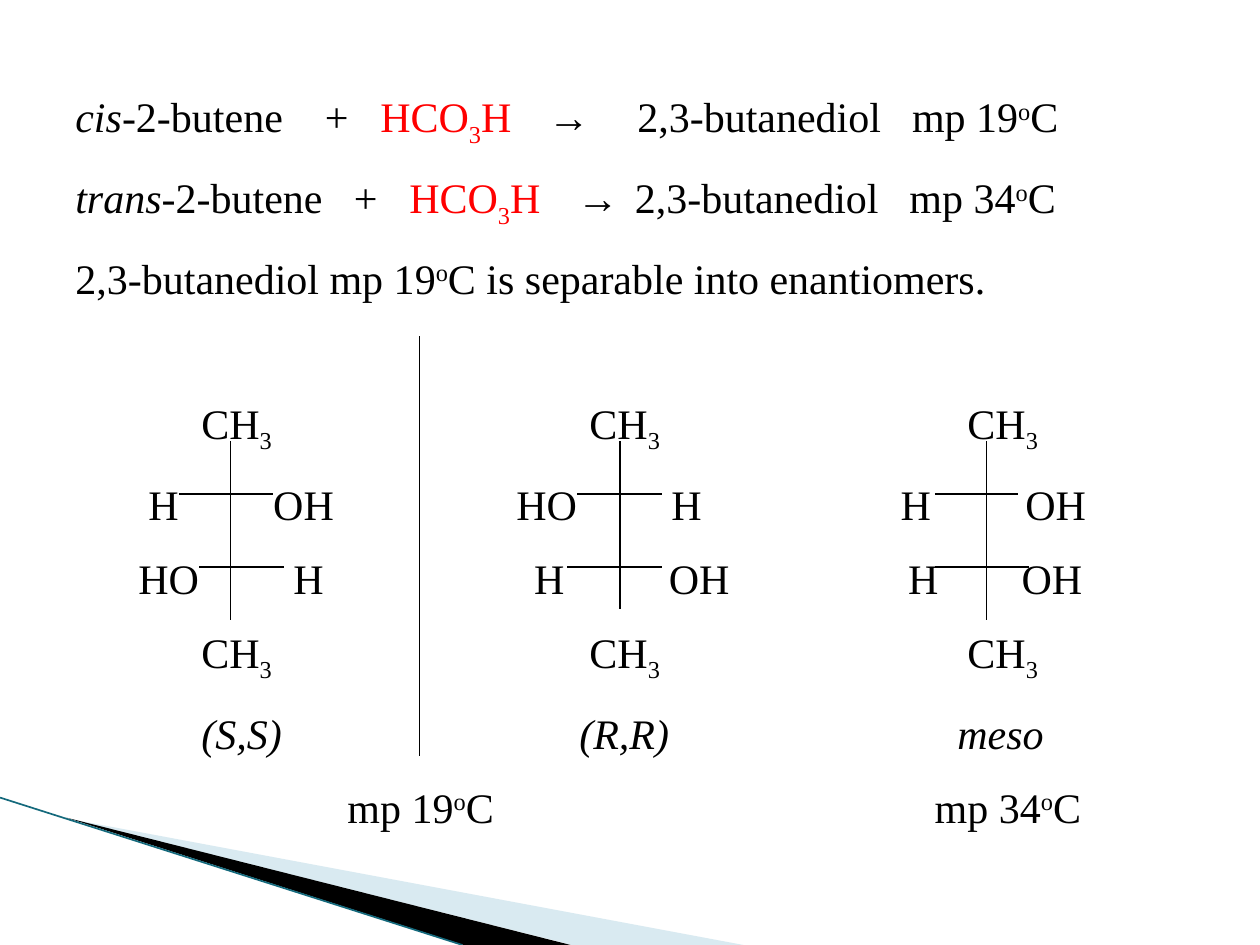
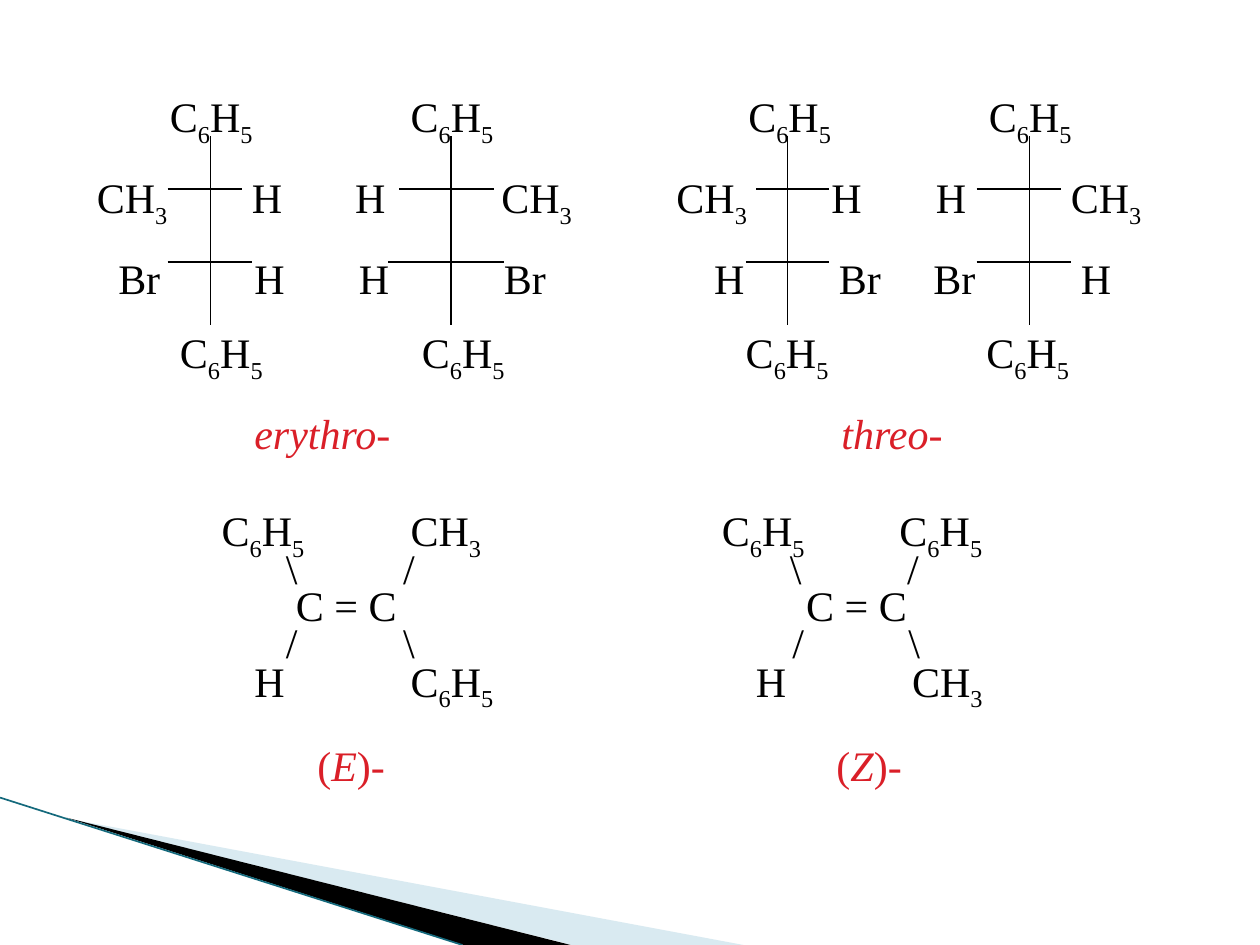
import lxml.etree
import pptx
import pptx.dml.color
import pptx.enum.shapes
import pptx.enum.text
import pptx.oxml
import pptx.oxml.ns
import pptx.util

Inches = pptx.util.Inches
Pt = pptx.util.Pt
RGBColor = pptx.dml.color.RGBColor
qn = pptx.oxml.ns.qn

BLACK = RGBColor(0x00, 0x00, 0x00)
REAGENT_RED = RGBColor(0xFF, 0x00, 0x00)
PREFIX_RED = RGBColor(0xDA, 0x1F, 0x28)
PALE_BLUE = RGBColor(0xA0, 0xCB, 0xDC)
TEAL = RGBColor(0x14, 0x69, 0x7C)
FONT = "Times New Roman"
ROW_GAP = 13.5
TIGHT_GAP = 12.5
INSET = 0.1
UPPER_ARM, LOWER_ARM = 0.42, 1.0


def split_markup(text):
    pieces = []
    italic = accent = False
    baseline = 0
    for char in text:
        if char == "*":
            italic = not italic
        elif char == "~":
            accent = not accent
        elif char in "_^":
            baseline = -25000 if char == "_" else 30000
        else:
            style = (italic, accent, baseline)
            if pieces and pieces[-1][1] == style:
                pieces[-1][0] += char
            else:
                pieces.append([char, style])
            baseline = 0
    return pieces


def write_row(paragraph, text, stops=(), gap=ROW_GAP, spacing=1.0, size=24, accent=REAGENT_RED):
    if stops:
        tab_list = lxml.etree.SubElement(paragraph._p.get_or_add_pPr(), qn("a:tabLst"))
        for stop in stops:
            lxml.etree.SubElement(tab_list, qn("a:tab"), pos=str(Inches(stop)), algn="l")
    paragraph.font.size = Pt(size)
    paragraph.line_spacing = spacing
    paragraph.space_before = Pt(gap)
    for piece, (italic, accented, baseline) in split_markup(text):
        run = paragraph.add_run()
        run.text = piece
        run.font.name = FONT
        run.font.size = Pt(size)
        run.font.italic = italic
        run.font.color.rgb = accent if accented else BLACK
        if baseline:
            run.font._element.set("baseline", str(baseline))


def write_rows(slide, box, rows, accent):
    frame = slide.shapes.add_textbox(*map(Inches, box)).text_frame
    frame.word_wrap = True
    frame.vertical_anchor = pptx.enum.text.MSO_ANCHOR.TOP
    frame.margin_left = frame.margin_right = Inches(INSET)
    for index, (text, stops, *spacing) in enumerate(rows):
        paragraph = frame.add_paragraph() if index else frame.paragraphs[0]
        layout = dict(zip(("gap", "spacing"), spacing))
        if not index:
            layout["gap"] = 0
        write_row(paragraph, text, stops, accent=accent, **layout)


def draw_line(shapes, start, end, color=BLACK, width=0.75):
    line = shapes.add_connector(
        pptx.enum.shapes.MSO_CONNECTOR.STRAIGHT, *map(Inches, (*start, *end)))
    line.line.color.rgb = color
    line.line.width = Pt(width)
    lxml.etree.SubElement(line.element.spPr, qn("a:effectLst"))
    return line


def draw_fischer_bonds(slide, box, top, molecules):
    left, box_top = box[:2]
    top += box_top
    for stem, length, upper, lower in molecules:
        draw_line(slide.shapes, (left + stem, top), (left + stem, top + length))
        for drop, (start, end) in ((UPPER_ARM, upper), (LOWER_ARM, lower)):
            draw_line(slide.shapes, (left + start, top + drop), (left + end, top + drop))


def draw_swoosh(shapes, points, color, alpha=100):
    start, *rest = [tuple(map(Inches, point)) for point in points]
    builder = shapes.build_freeform(*start)
    builder.add_line_segments(rest, close=True)
    swoosh = builder.convert_to_shape()
    swoosh.shadow.inherit = False
    swoosh.fill.solid()
    swoosh.fill.fore_color.rgb = color
    swoosh.line.fill.background()
    if alpha < 100:
        fill = swoosh.element.spPr.find(qn("a:solidFill"))
        lxml.etree.SubElement(fill[0], qn("a:alpha"), val=str(alpha * 1000))
    return swoosh


def decorate_layout(layout, slide):
    shapes = slide.shapes
    corner = (
        draw_swoosh(shapes, ((0.55, 6.5), (5.9, 7.5), (4.54, 7.5)), PALE_BLUE, alpha=40),
        draw_swoosh(shapes, ((0.53, 6.49), (4.53, 7.5), (3.68, 7.5)), BLACK),
        draw_line(shapes, (0, 6.33), (3.67, 7.5), TEAL, 0.95),
    )
    for part in corner:
        layout.element.cSld.spTree.append(part.element)


def build_butanediol_slide(slide, box):
    methyl_stops = (1.0, 4.08, 7.08)
    rows = (
        ("*cis*-2-butene\t+\t~HCO_3H~\t→\t2,3-butanediol\tmp 19^oC",
         (1.98, 2.42, 3.75, 4.46, 6.64)),
        ("*trans*-2-butene\t+\t~HCO_3H~\t→\t2,3-butanediol\tmp 34^oC",
         (2.21, 2.65, 3.98, 4.44, 6.62)),
        ("2,3-butanediol mp 19^oC is separable into enantiomers.", ()),
        ("\tCH_3\tCH_3\tCH_3", methyl_stops, 54),
        ("\tH\tOH\tHO\tH\tH\tOH", (0.58, 1.57, 3.5, 4.73, 6.55, 7.54)),
        ("\tHO\tH\tH\tOH\tH\tOH", (0.5, 1.73, 3.64, 4.71, 6.61, 7.51)),
        ("\tCH_3\tCH_3\tCH_3", methyl_stops),
        ("*\t(S,S)\t(R,R)\tmeso*", (1.0, 4.0, 7.0)),
        ("\tmp 19^oC\tmp 34^oC", (2.16, 6.82)),
    )
    write_rows(slide, box, rows, REAGENT_RED)
    draw_fischer_bonds(slide, box, 2.83, (
        (1.33, 1.42, (0.92, 1.67), (1.08, 1.75)),
        (4.42, 1.33, (4.08, 4.75), (4.0, 4.75)),
        (7.33, 1.42, (6.92, 7.58), (6.92, 7.67)),
    ))
    mirror = box[0] + 2.83
    draw_line(slide.shapes, (mirror, box[1] + 2), (mirror, box[1] + 5.33))


def build_prefix_slide(slide, box):
    phenyls = "\tC_6H_5" * 4
    rows = (
        (phenyls, (0.58, 2.49, 5.17, 7.08)),
        ("CH_3\tH\tH\tCH_3\tCH_3\tH\tH\tCH_3",
         (1.23, 2.05, 3.21, 4.6, 5.83, 6.66, 7.73)),
        ("\tBr\tH\tH\tBr\tH\tBr\tBr\tH",
         (0.17, 1.25, 2.08, 3.23, 4.9, 5.89, 6.64, 7.81)),
        (phenyls, (0.66, 2.58, 5.15, 7.06)),
        ("~*\terythro-\tthreo-*~", (1.25, 5.91)),
        ("\tC_6H_5\tCH_3\tC_6H_5\tC_6H_5", (0.99, 2.49, 4.96, 6.37), 43, 0.3),
        ("\t\\\t/\t\\\t/", (1.5, 2.43, 5.5, 6.43), TIGHT_GAP, 0.3),
        ("\tC = C\tC = C", (1.58, 5.63), TIGHT_GAP, 0.3),
        ("\t/\t\\\t/\t\\", (1.5, 2.43, 5.52, 6.44), TIGHT_GAP, 0.3),
        ("\tH\tC_6H_5\tH\tCH_3", (1.25, 2.49, 5.23, 6.47), TIGHT_GAP, 0.3),
        ("~\t(*E*)-\t(*Z*)-~", (1.75, 5.87), 35, 0.5),
    )
    write_rows(slide, box, rows, PREFIX_RED)
    draw_fischer_bonds(slide, box, 0.41, (
        (1.0, 1.5, (0.66, 1.25), (0.66, 1.33)),
        (2.91, 1.5, (2.5, 3.25), (2.41, 3.33)),
        (5.58, 1.5, (5.33, 5.91), (5.25, 5.91)),
        (7.5, 1.5, (7.08, 7.75), (7.08, 7.83)),
    ))


def main():
    deck = pptx.Presentation()
    deck.slide_width, deck.slide_height = Inches(10), Inches(7.5)
    blank = deck.slide_layouts[6]
    butanediol, prefixes = (deck.slides.add_slide(blank) for _ in range(2))
    decorate_layout(blank, butanediol)
    build_butanediol_slide(butanediol, (0.5, 0.67, 9.17, 6.49))
    build_prefix_slide(prefixes, (0.67, 0.67, 8.58, 5.69))
    deck.save("out.pptx")


if __name__ == "__main__":
    main()
